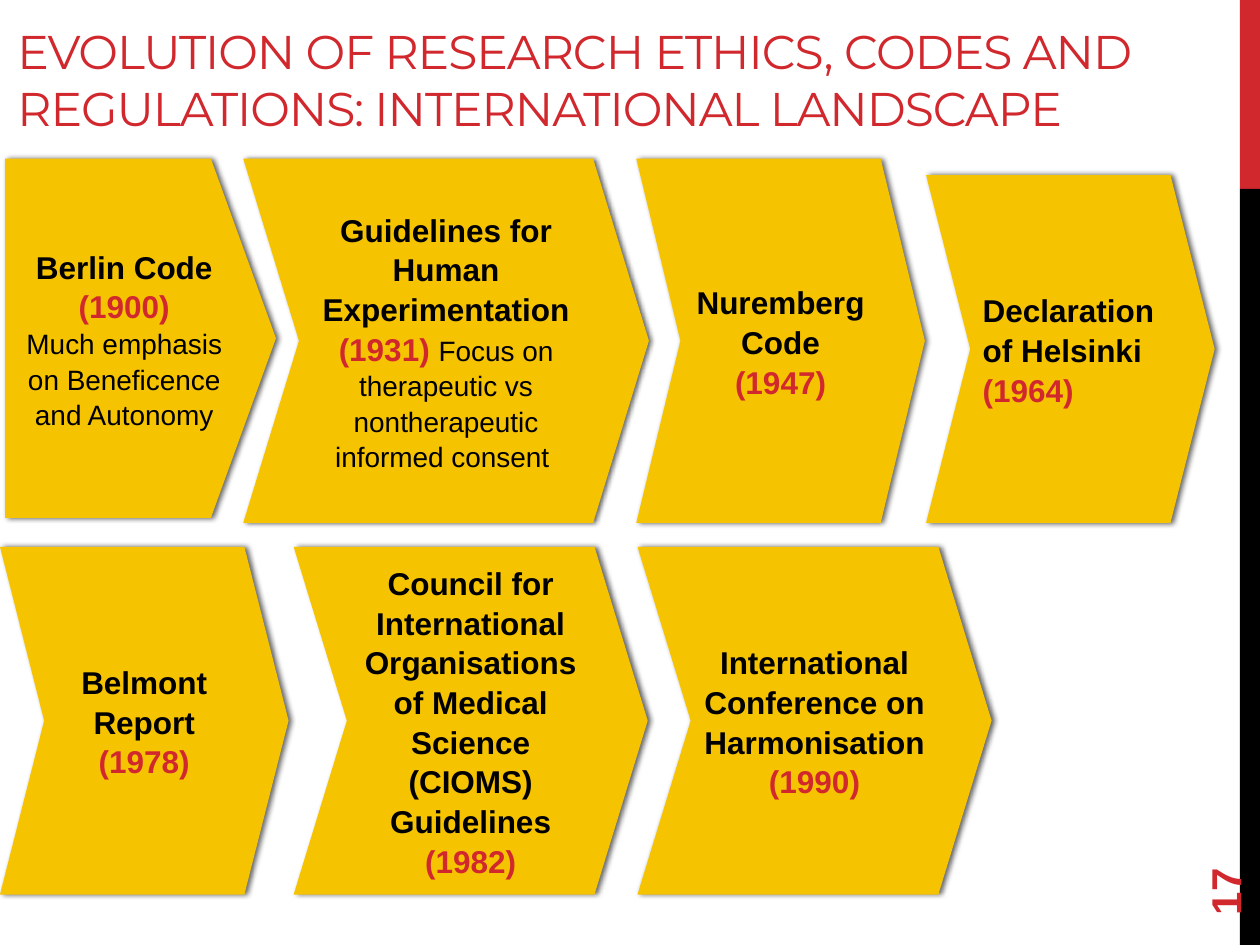
"""Build a slide with a timeline of research ethics codes."""
from typing import NamedTuple

from lxml import etree
from pptx import Presentation
from pptx.dml.color import RGBColor
from pptx.enum.shapes import MSO_SHAPE
from pptx.enum.text import MSO_ANCHOR, PP_ALIGN
from pptx.oxml import parse_xml
from pptx.oxml.ns import nsdecls
from pptx.util import Pt

RECT, PENTAGON, CHEVRON = MSO_SHAPE.RECTANGLE, MSO_SHAPE.PENTAGON, MSO_SHAPE.CHEVRON
MIDDLE, BOTTOM = MSO_ANCHOR.MIDDLE, MSO_ANCHOR.BOTTOM
LEFT, CENTER = PP_ALIGN.LEFT, PP_ALIGN.CENTER
RED = RGBColor(0xD1, 0x28, 0x2E)
BLACK = RGBColor(0, 0, 0)
YELLOW = RGBColor(0xF6, 0xC3, 0x00)

NAME = {"name": "Arial", "size": Pt(18), "bold": True, "color": BLACK}
YEAR = NAME | {"color": RED}
NOTE = NAME | {"size": Pt(16), "bold": False}
TITLE = {"name": "Montserrat", "size": Pt(27), "bold": False, "color": RED}
NUMBER = YEAR | {"size": Pt(24)}

SHADOW = (
    f'<a:outerShdw {nsdecls("a")} blurRad="{Pt(3)}" dist="{Pt(1.5)}" dir="0" rotWithShape="0">'
    '<a:srgbClr val="000000"><a:alpha val="60000"/></a:srgbClr></a:outerShdw>'
)


class Box(NamedTuple):
    """Position and size in points."""
    x: float
    y: float
    w: float
    h: float


class Milestone(NamedTuple):
    """One arrow of the timeline."""
    box: Box
    name: str
    year: str
    note: str = ""
    note_below: bool = False
    kind: int = CHEVRON
    adj: float = 0.153
    align: int = CENTER


TOP, ROW2, ROW2_H = 90.7, 312.5, 198.7
MILESTONES = [
    Milestone(Box(2.9, TOP, 154.8, 205.2), "Berlin Code ", "(1900)",
              "Much emphasis on Beneficence and Autonomy", True, PENTAGON, 0.24),
    Milestone(Box(139, TOP, 231.8, 208.1), "Guidelines for Human Experimentation ", "(1931) ",
              "Focus on therapeutic vs nontherapeutic informed consent "),
    Milestone(Box(363.6, TOP, 164.9, 208.1), "Nuremberg Code ", "(1947)"),
    Milestone(Box(529.2, 100.1, 164.9, ROW2_H), "Declaration of Helsinki ", "(1964)", align=LEFT),
    Milestone(Box(0, ROW2, 164.9, ROW2_H), "Belmont Report ", "(1978)"),
    Milestone(Box(167.8, ROW2, 202.3, ROW2_H),
              "Council for International Organisations of Medical Science (CIOMS) Guidelines ",
              "(1982)"),
    Milestone(Box(364.3, ROW2, 202.3, ROW2_H), "International Conference on Harmonisation ", "(1990)"),
]


def add_run(p, text: str, fmt: dict):
    """Append a formatted run to a paragraph."""
    r = p.add_run()
    r.text = text
    for key, value in fmt.items():
        if key == "color":
            r.font.color.rgb = value
        else:
            setattr(r.font, key, value)
    return r


def add_filled(s, kind: int, box: Box, color: RGBColor):
    """Add a filled shape without an outline or shadow."""
    sp = s.shapes.add_shape(kind, *map(Pt, box))
    sp.fill.solid()
    sp.fill.fore_color.rgb = color
    sp.line.fill.background()
    sp.shadow.inherit = False
    return sp


def add_label(s, box: Box, text: str, fmt: dict, anchor: int, rotation: float = 0):
    """Add a text box and return its run."""
    sp = s.shapes.add_textbox(*map(Pt, box))
    sp.rotation = rotation
    tf = sp.text_frame
    tf.word_wrap = True
    tf.vertical_anchor = anchor
    return add_run(tf.paragraphs[0], text, fmt)


def add_milestone(s, m: Milestone) -> None:
    """Add a timeline arrow with its name, year and optional note."""
    sp = add_filled(s, m.kind, m.box, YELLOW)
    sp.adjustments[0] = m.adj
    etree.ElementBase.append(sp.element.spPr.effectLst, parse_xml(SHADOW)) if hasattr(
        sp.element.spPr, "effectLst") else None
    tf = sp.text_frame
    tf.word_wrap = True
    tf.vertical_anchor = MIDDLE
    p = tf.paragraphs[0]
    add_run(p, m.name, NAME)
    add_run(p, m.year, YEAR)
    if m.note:
        add_run(tf.add_paragraph() if m.note_below else p, m.note, NOTE)
    for p in tf.paragraphs:
        p.alignment = m.align
        p.line_spacing = 1.05


def main() -> None:
    """Build and save the slide."""
    prs = Presentation()
    prs.slide_width, prs.slide_height = Pt(720), Pt(540)
    s = prs.slides.add_slide(prs.slide_layouts[6])
    add_filled(s, RECT, Box(708.5, 0, 11.5, 108), RED)
    add_filled(s, RECT, Box(708.5, 108, 11.5, 432), BLACK)
    r = add_label(s, Box(2.9, 0, 711.4, 81.4),
                  "EVOLUTION OF RESEARCH ETHICS, CODES AND REGULATIONS: INTERNATIONAL LANDSCAPE",
                  TITLE, BOTTOM)
    r.font._element.set("spc", "-60")
    add_label(s, Box(648, 463.7, 103.7, 28.8), "17", NUMBER, MIDDLE, 270)
    for m in MILESTONES:
        add_milestone(s, m)
    prs.save("out.pptx")


if __name__ == "__main__":
    main()
